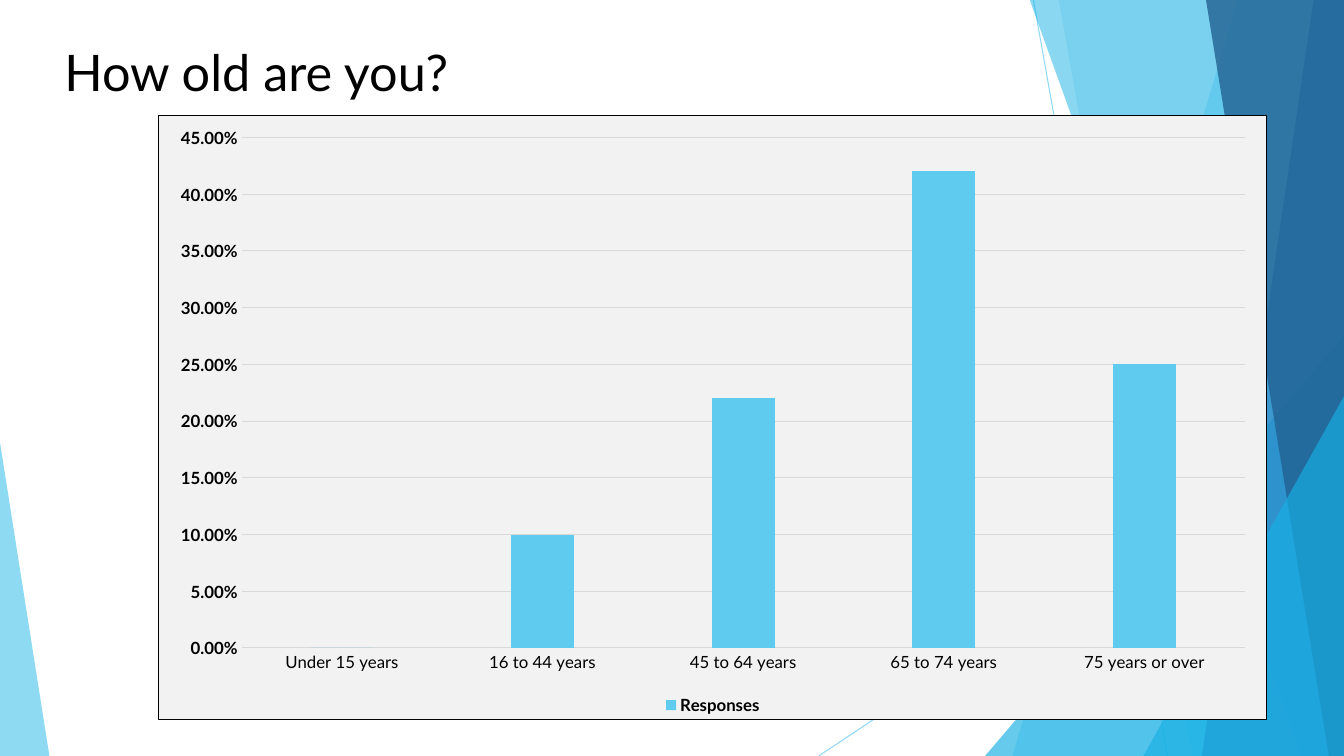
from lxml.etree import SubElement
from pptx import Presentation
from pptx.chart.data import CategoryChartData
from pptx.dml.color import RGBColor
from pptx.enum.chart import XL_CHART_TYPE, XL_LEGEND_POSITION, XL_TICK_MARK
from pptx.enum.shapes import MSO_CONNECTOR, MSO_SHAPE
from pptx.enum.text import MSO_ANCHOR
from pptx.oxml import parse_xml
from pptx.oxml.ns import nsdecls, qn
from pptx.util import Inches, Pt

SKY, CYAN, BLUE, NAVY = "5FCBEF", "17B0E4", "2E83C3", "226292"
BLACK, GRID, PANEL = "000000", "D9D9D9", "F2F2F2"
RIGHT, TOP, BOTTOM = 13.33, -0.01, 7.5

RAYS = [((10.25, 0), (11.58, BOTTOM)), ((RIGHT, 4.03), (8.12, BOTTOM))]
BACK_BANDS = [(12.28, 10.04, SKY, 36), (10.5, 11.83, SKY, 20)]
FRONT_BANDS = [
    (10.21, 12.91, CYAN, 50),
    (13.03, 11.92, BLUE, 70),
    (11.96, 13.18, NAVY, 80),
]
AGES = {
    "Under 15 years": 0,
    "16 to 44 years": 0.1,
    "45 to 64 years": 0.22,
    "65 to 74 years": 0.42,
    "75 years or over": 0.25,
}


def rgb(color):
    return RGBColor.from_string(color)


def set_alpha(fmt, percent):
    color = next(fmt.iter(qn("a:srgbClr")))
    SubElement(color, qn("a:alpha")).set("val", str(percent * 1000))


def set_font(font, **values):
    for name, value in {"name": "Lato", "size": Pt(12), **values}.items():
        setattr(font, name, value)
    font.color.rgb = rgb(BLACK)


def set_line(line, color):
    line.color.rgb = rgb(color)
    line.width = Pt(0.75)


def paint(sp, color, alpha):
    sp.shadow.inherit = False
    sp.fill.solid()
    sp.fill.fore_color.rgb = rgb(color)
    set_alpha(sp.fill._xPr, alpha)
    sp.line.fill.background()


def add_ray(s, start, end):
    ray = s.shapes.add_connector(MSO_CONNECTOR.STRAIGHT, *map(Inches, start + end))
    set_line(ray.line, SKY)
    sp_pr = ray._element.spPr
    set_alpha(sp_pr, 70)
    SubElement(sp_pr, qn("a:effectLst"))


def add_band(s, top_x, bottom_x, color, alpha):
    corners = [(top_x, TOP), (RIGHT, TOP), (RIGHT, BOTTOM), (bottom_x, BOTTOM)]
    points = [(Inches(x), Inches(y)) for x, y in corners]
    builder = s.shapes.build_freeform(*points[0])
    builder.add_line_segments(points[1:], close=True)
    paint(builder.convert_to_shape(), color, alpha)


def add_triangle(s, left, top, width, apex, color, alpha):
    box = map(Inches, (left, top, width, BOTTOM - top))
    sp = s.shapes.add_shape(MSO_SHAPE.ISOSCELES_TRIANGLE, *box)
    sp.adjustments[0] = apex
    paint(sp, color, alpha)


def add_title(s, text):
    box = s.shapes.add_textbox(Inches(0.54), Inches(0.36), Inches(9.4), Inches(0.78))
    tf = box.text_frame
    tf.word_wrap = True
    tf.vertical_anchor = MSO_ANCHOR.TOP
    r = tf.paragraphs[0].add_run()
    r.text = text
    set_font(r.font, size=Pt(36))


def add_panel(chart):
    panel = parse_xml(
        f'<c:spPr {nsdecls("c", "a")}>'
        f'<a:solidFill><a:srgbClr val="{PANEL}"/></a:solidFill>'
        f'<a:ln w="{Pt(0.75)}"><a:solidFill><a:srgbClr val="{BLACK}"/></a:solidFill></a:ln>'
        '</c:spPr>'
    )
    chart._chartSpace.find(qn("c:chart")).addnext(panel)


def add_age_chart(s):
    data = CategoryChartData(number_format="0.00%")
    data.categories = list(AGES)
    data.add_series("Responses", list(AGES.values()))
    box = map(Inches, (1.57, 1.14, 11, 6))
    chart = s.shapes.add_chart(XL_CHART_TYPE.COLUMN_CLUSTERED, *box, data).chart
    chart.has_title = False
    set_font(chart.font, size=Pt(10), bold=True)
    add_panel(chart)

    plot = chart.plots[0]
    for name, value in {"gap_width": 219, "overlap": -27, "vary_by_categories": False}.items():
        setattr(plot, name, value)
    fill = plot.series[0].format.fill
    fill.solid()
    fill.fore_color.rgb = rgb(SKY)

    cat, val = chart.category_axis, chart.value_axis
    for axis, bold in ((cat, False), (val, True)):
        axis.major_tick_mark = axis.minor_tick_mark = XL_TICK_MARK.NONE
        set_font(axis.tick_labels.font, bold=bold)
    set_line(cat.format.line, GRID)
    val.format.line.fill.background()
    set_line(val.major_gridlines.format.line, GRID)
    val.minimum_scale, val.maximum_scale, val.major_unit = 0, 0.45, 0.05
    val.tick_labels.number_format = "0.00%"
    val.tick_labels.number_format_is_linked = False

    chart.has_legend = True
    chart.legend.position = XL_LEGEND_POSITION.BOTTOM
    chart.legend.include_in_layout = False
    set_font(chart.legend.font, bold=True)


def main():
    prs = Presentation()
    prs.slide_width, prs.slide_height = Inches(13.33), Inches(7.5)
    s = prs.slides.add_slide(prs.slide_layouts[6])
    for ray in RAYS:
        add_ray(s, *ray)
    for band in BACK_BANDS:
        add_band(s, *band)
    add_triangle(s, 9.77, 3.33, 3.56, 1, CYAN, 66)
    for band in FRONT_BANDS:
        add_band(s, *band)
    add_triangle(s, 11.34, 3.93, 1.99, 1, CYAN, 66)
    add_triangle(s, 0, 4.39, 0.49, 0, SKY, 70)
    add_title(s, "How old are you?")
    add_age_chart(s)
    prs.save("out.pptx")


if __name__ == "__main__":
    main()
